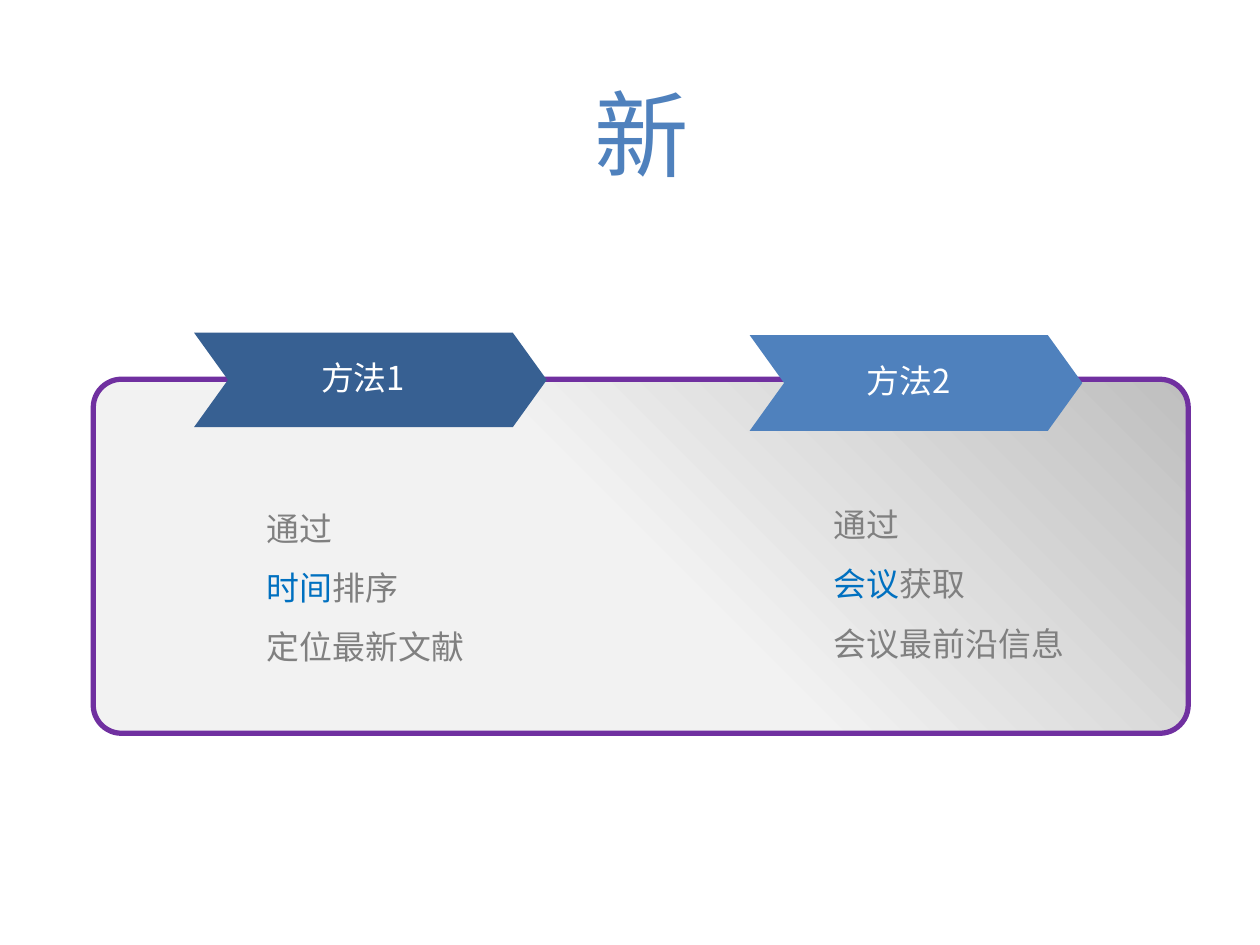
from copy import deepcopy
from dataclasses import dataclass

from pptx import Presentation
from pptx import util as u
from pptx.dml.color import RGBColor
from pptx.enum import shapes, text
from pptx.oxml.ns import qn


@dataclass(frozen=True)
class Theme:
    heading_font: str = "Noto Sans CJK SC"
    body_font: str = "Roboto"
    title_size: float = 54
    body_size: float = 18.8
    blue: str = "4F81BD"
    dark_blue: str = "376092"
    accent: str = "0070C0"
    grey: str = "808080"
    white: str = "FFFFFF"
    border: str = "7030A0"
    panel_light: str = "F2F2F2"
    panel_dark: str = "BFBFBF"


THEME = Theme()


def color(value):
    return RGBColor.from_string(value)


def style_font(font, name, size, value):
    font.name = name
    font.size = u.Pt(size)
    font.color.rgb = color(value)


def add_text_frame(slide, box, margin_x=0.1, margin_y=0.05):
    frame = slide.shapes.add_textbox(*map(u.Inches, box)).text_frame
    frame.margin_left = frame.margin_right = u.Inches(margin_x)
    frame.margin_top = frame.margin_bottom = u.Inches(margin_y)
    frame.word_wrap = True
    return frame


def add_title(slide, box, title):
    paragraph = add_text_frame(slide, box, 0, 0).paragraphs[0]
    paragraph.text = title
    paragraph.alignment = text.PP_ALIGN.CENTER
    style_font(paragraph.font, THEME.heading_font, THEME.title_size, THEME.blue)


def add_panel(slide, box):
    panel = slide.shapes.add_shape(
        shapes.MSO_SHAPE.ROUNDED_RECTANGLE, *map(u.Inches, box))
    panel.adjustments[0] = 0.08
    panel.shadow.inherit = False
    panel.line.color.rgb = color(THEME.border)
    panel.line.width = u.Pt(3)
    panel.fill.gradient()
    panel.fill.gradient_angle = 45
    stop_list = panel.fill._fill._gradFill.find(qn("a:gsLst"))
    stop_list.insert(1, deepcopy(stop_list[0]))
    stops = zip(panel.fill.gradient_stops, (0, 0.5, 1),
                (THEME.panel_light, THEME.panel_light, THEME.panel_dark))
    for stop, position, value in stops:
        stop.position = position
        stop.color.rgb = color(value)


def add_banner(slide, box, label, fill):
    left, top, width, height = box
    group = slide.shapes.add_group_shape()
    layers = ((box, 0.36),
              ((left + 0.04, top + 0.02, width - 0.07, height - 0.04), 0.39))
    for layer, adjustment in layers:
        chevron = group.shapes.add_shape(
            shapes.MSO_SHAPE.CHEVRON, *map(u.Inches, layer))
        chevron.adjustments[0] = adjustment
        chevron.shadow.inherit = False
        chevron.fill.solid()
        chevron.fill.fore_color.rgb = color(fill)
        chevron.line.fill.background()
    label_box = (left + width / 2 - 0.49, top + 0.15, 1.5, 0.41)
    paragraph = add_text_frame(slide, label_box).paragraphs[0]
    paragraph.text = label
    style_font(paragraph.font, THEME.heading_font, THEME.body_size, THEME.white)


def add_description(slide, box, lines):
    frame = add_text_frame(slide, box)
    for index, (highlight, rest) in enumerate(lines):
        paragraph = frame.add_paragraph() if index else frame.paragraphs[0]
        paragraph.line_spacing = 1.5
        style_font(paragraph.font, THEME.body_font, THEME.body_size, THEME.grey)
        if highlight:
            run = paragraph.add_run()
            run.text = highlight
            run.font.color.rgb = color(THEME.accent)
        paragraph.add_run().text = rest


def main():
    presentation = Presentation()
    presentation.slide_width = u.Inches(10)
    presentation.slide_height = u.Inches(7.5)
    slide = presentation.slides.add_slide(presentation.slide_layouts[6])
    add_panel(slide, (0.74, 3.01, 8.69, 2.81))
    methods = (
        ("方法1", THEME.dark_blue, (1.54, 2.64, 2.8, 0.75), (2.02, 3.83, 1.85, 1.52),
         (("", "通过"), ("时间", "排序"), ("", "定位最新文献"))),
        ("方法2", THEME.blue, (5.95, 2.66, 2.64, 0.76), (6.52, 3.8, 2.16, 1.52),
         (("", "通过"), ("会议", "获取"), ("", "会议最前沿信息"))),
    )
    for label, fill, banner_box, description_box, lines in methods:
        add_description(slide, description_box, lines)
        add_banner(slide, banner_box, label, fill)
    add_title(slide, (0.43, 0.6, 9.33, 0.52), "新")
    presentation.save("out.pptx")


if __name__ == "__main__":
    main()
